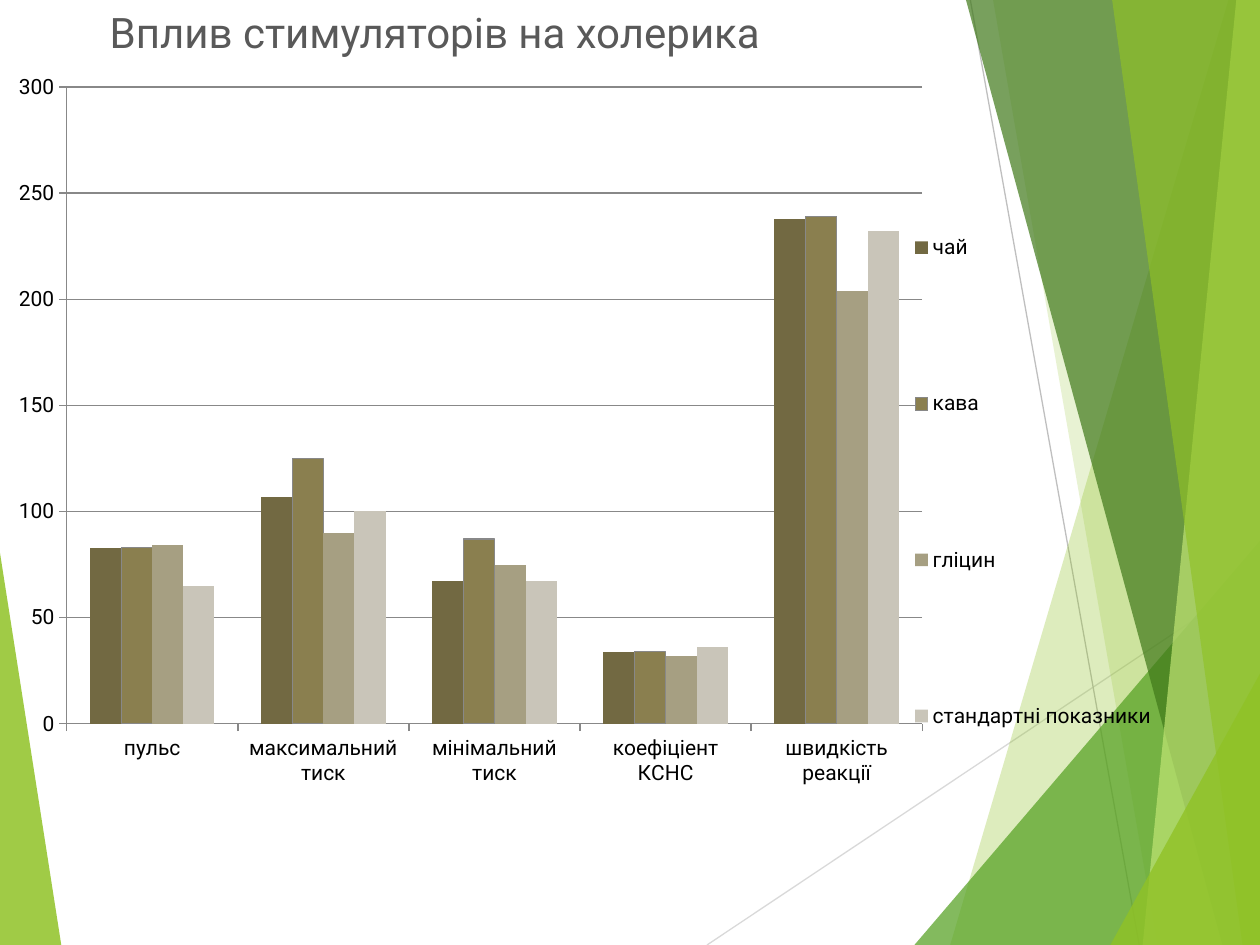
from dataclasses import dataclass

from lxml.etree import SubElement
from pptx import Presentation
from pptx.chart.data import CategoryChartData
from pptx.dml.color import RGBColor
from pptx.enum.chart import XL_CHART_TYPE, XL_LEGEND_POSITION, XL_TICK_MARK
from pptx.enum.shapes import MSO_CONNECTOR
from pptx.enum.text import MSO_ANCHOR, PP_ALIGN
from pptx.oxml import parse_xml
from pptx.oxml.ns import nsdecls, qn
from pptx.util import Pt


@dataclass(frozen=True)
class Theme:
    font: str = "Roboto"
    title_size: int = 24
    chart_size: int = 12
    title: str = "595959"
    text: str = "000000"
    axis: str = "888888"
    lime: str = "90C226"
    green: str = "54A021"
    forest: str = "3F7819"
    pale: str = "C0E474"
    light_line: str = "D9D9D9"
    dark_line: str = "BFBFBF"
    bars: tuple = ("726942", "8A7F4F", "A69F82", "C9C5B9")


THEME = Theme()
WIDTH, HEIGHT = 720, 540

CATEGORIES = ["пульс", "максимальний тиск", "мінімальний тиск",
              "коефіціент КСНС", "швидкість реакції"]
SERIES = {
    "чай": (83, 107, 67, 34, 238),
    "кава": (83, 125, 87, 34, 239),
    "гліцин": (84, 90, 75, 32, 204),
    "стандартні показники": (65, 100, 67, 36, 232),
}


def rgb(value):
    return RGBColor.from_string(value)


def style_font(font, size, color):
    font.name = THEME.font
    font.size = Pt(size)
    font.color.rgb = rgb(color)


def style_line(line, color, width=0.75):
    line.color.rgb = rgb(color)
    line.width = Pt(width)


def add_facet(page, box, points, color, opacity):
    """Translucent polygon; points are relative to the box."""
    left, top = box[:2]
    corners = [(Pt(left + x), Pt(top + y)) for x, y in points]
    builder = page.shapes.build_freeform(*corners[0])
    builder.add_line_segments(corners[1:], close=True)
    shape = builder.convert_to_shape()
    shape.shadow.inherit = False
    shape.fill.solid()
    shape.fill.fore_color.rgb = rgb(color)
    shape.line.fill.background()
    fill_color = shape.fill._xPr.find(qn("a:solidFill"))[0]
    SubElement(fill_color, qn("a:alpha")).set("val", str(opacity * 1000))


def add_ray(page, box, start, end, color):
    left, top = box[:2]
    ray = page.shapes.add_connector(
        MSO_CONNECTOR.STRAIGHT, Pt(left + start[0]), Pt(top + start[1]),
        Pt(left + end[0]), Pt(top + end[1]))
    style_line(ray.line, color)
    SubElement(ray._element.spPr, qn("a:effectLst"))


def add_backdrop(page, box):
    width, height = box[2:]

    def band(top_x, bottom_x):
        return [(top_x, 0), (bottom_x, height), (width, height), (width, 0)]

    def corner(bottom_x, right_y):
        return [(bottom_x, height), (width, right_y), (width, height)]

    # Left wedge and thin rays
    add_facet(page, box, [(0, 316), (35, height), (0, height)], THEME.lime, 85)
    add_ray(page, box, (404, height), (width, 329), THEME.light_line)
    add_ray(page, box, (554.5, 0), (651, height), THEME.dark_line)

    # Overlapping facets on the right, back to front
    facets = [
        (band(702, 543), THEME.lime, 30),
        (band(567.5, 661.5), THEME.lime, 20),
        (corner(522.5, 309), THEME.green, 72),
        (band(552, 698.5), THEME.forest, 70),
        (band(706.5, 653), THEME.pale, 70),
        (band(635.5, 710), THEME.lime, 65),
        (corner(634.5, 385), THEME.lime, 80),
    ]
    for points, color, opacity in facets:
        add_facet(page, box, points, color, opacity)


def add_title(page, box, text):
    title = page.shapes.title
    title.left, title.top, title.width, title.height = map(Pt, box)
    page.shapes._spTree.append(title._element)  # in front of the backdrop
    frame = title.text_frame
    frame.text = text
    frame.word_wrap = True
    frame.vertical_anchor = MSO_ANCHOR.TOP
    para = frame.paragraphs[0]
    para.alignment = PP_ALIGN.LEFT
    style_font(para.runs[0].font, THEME.title_size, THEME.title)


def manual_layout(x, y, width, height, inner=False):
    target = '<c:layoutTarget val="inner"/>' if inner else ""
    sizes = "".join(f'<c:{tag} val="{value}"/>' for tag, value in
                    zip("xywh", (x, y, width, height)))
    return parse_xml(
        f'<c:layout {nsdecls("c")}><c:manualLayout>{target}'
        f'<c:xMode val="edge"/><c:yMode val="edge"/>{sizes}'
        '</c:manualLayout></c:layout>')


def add_effects_chart(page, box):
    data = CategoryChartData()
    data.categories = CATEGORIES
    for name, values in SERIES.items():
        data.add_series(name, values)
    chart = page.shapes.add_chart(
        XL_CHART_TYPE.COLUMN_CLUSTERED, *map(Pt, box), data).chart
    chart.has_title = False
    style_font(chart.font, THEME.chart_size, THEME.text)

    # Bars
    plot = chart.plots[0]
    plot.vary_by_categories = False
    plot.gap_width, plot.overlap = 150, 0
    for series, color in zip(plot.series, THEME.bars):
        series.format.fill.solid()
        series.format.fill.fore_color.rgb = rgb(color)
    style_line(plot.series[1].format.line, THEME.axis)

    # Axes
    for axis in (chart.category_axis, chart.value_axis):
        axis.major_tick_mark = XL_TICK_MARK.OUTSIDE
        axis.minor_tick_mark = XL_TICK_MARK.NONE
        style_line(axis.format.line, THEME.axis)
    scale = chart.value_axis
    scale.minimum_scale, scale.maximum_scale, scale.major_unit = 0, 300, 50
    scale.has_major_gridlines = True
    style_line(scale.major_gridlines.format.line, THEME.axis)

    # Legend and plot area placement, as fractions of the chart
    chart.has_legend = True
    legend = chart.legend
    legend.position = XL_LEGEND_POSITION.RIGHT
    legend.include_in_layout = False
    for old in legend._element.findall(qn("c:layout")):
        legend._element.remove(old)
    legend._element.find(qn("c:legendPos")).addnext(
        manual_layout(0.72, 0.11, 0.2, 0.8))
    area = chart._chartSpace.chart.plotArea
    for old in area.findall(qn("c:layout")):
        area.remove(old)
    area.insert(0, manual_layout(0.053, 0.092, 0.679, 0.674, inner=True))


def main():
    deck = Presentation()
    deck.slide_width, deck.slide_height = Pt(WIDTH), Pt(HEIGHT)
    page = deck.slides.add_slide(deck.slide_layouts[5])
    full_page = (0, 0, WIDTH, HEIGHT)
    add_backdrop(page, full_page)
    add_title(page, (55.5, 0, 459.5, 36), "Вплив стимуляторів на холерика")
    add_effects_chart(page, full_page)
    deck.save("out.pptx")


if __name__ == "__main__":
    main()
